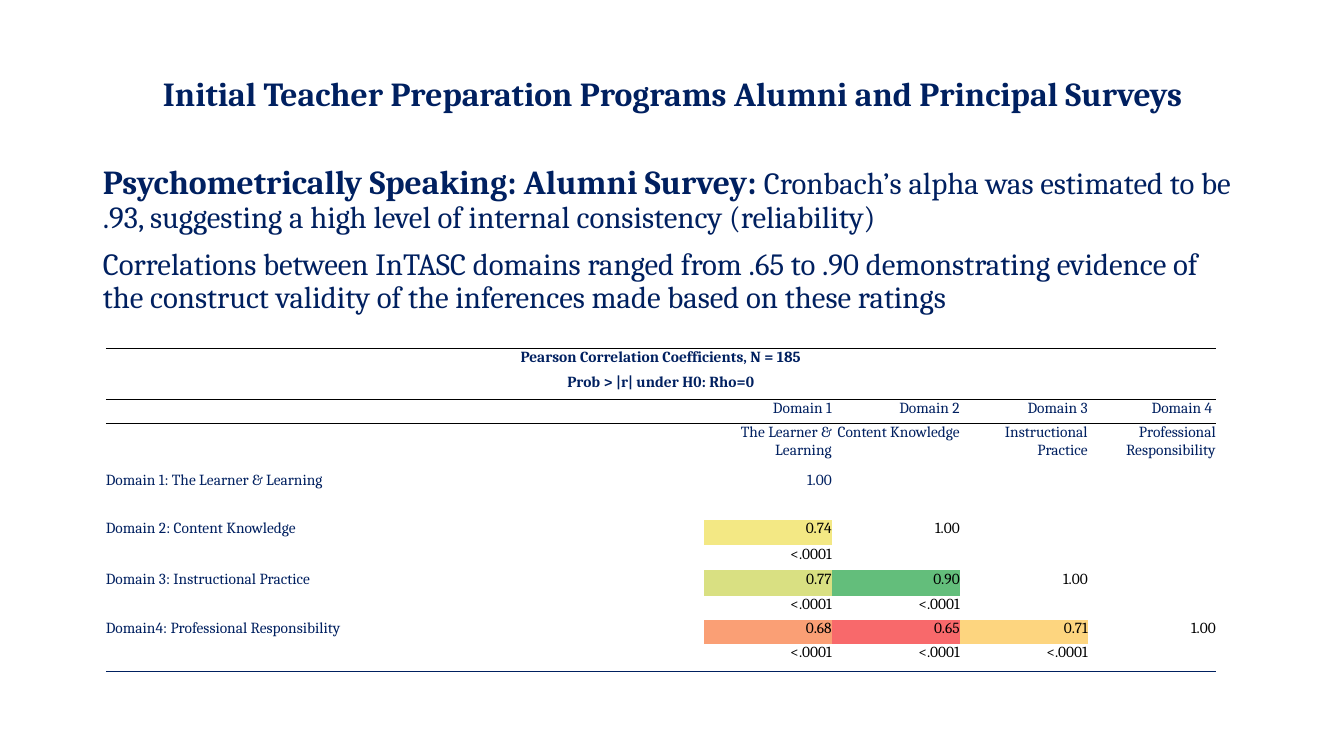
from dataclasses import dataclass

from lxml import etree
from pptx import Presentation
from pptx import util as u
from pptx.dml.color import RGBColor
from pptx.enum import text as t
from pptx.oxml import ns

PX = 9144
PLAIN = "{2D5ABB26-0587-4C30-8999-92F81FD0307C}"
LEFT, MID, RIGHT = t.PP_ALIGN.LEFT, t.PP_ALIGN.CENTER, t.PP_ALIGN.RIGHT


@dataclass(frozen=True)
class Theme:
    face: str = "Cambria"
    navy: str = "002060"
    black: str = "000000"
    head: int = 24
    body: int = 22
    small: int = 11


def px(num):
    return u.Emu(num * PX)


def apply(obj, form):
    for key, val in form.items():
        setattr(obj, key, val)


class Deck:
    def __init__(self, theme, wide, high):
        self.theme = theme
        self.prs = Presentation()
        apply(self.prs, {"slide_width": px(wide), "slide_height": px(high)})
        self.slide = self.prs.slides.add_slide(self.prs.slide_layouts[1])

    def place(self, shape, box):
        apply(shape, dict(zip(("left", "top", "width", "height"), map(px, box))))

    def label(self, para, words, size, color, bold=False):
        run = para.add_run()
        run.text = words
        apply(run.font, {"name": self.theme.face, "size": u.Pt(size), "bold": bold})
        run.font.color.rgb = RGBColor.from_string(color)

    def title(self, box, words):
        shape = self.slide.shapes.title
        self.place(shape, box)
        frame = shape.text_frame
        apply(frame, {"word_wrap": True, "auto_size": t.MSO_AUTO_SIZE.NONE,
                      "vertical_anchor": t.MSO_ANCHOR.MIDDLE,
                      "margin_bottom": px(40)})
        para = frame.paragraphs[0]
        apply(para, {"alignment": MID, "line_spacing": 0.9})
        self.label(para, words, self.theme.head, self.theme.navy, True)

    def body(self, box, paras):
        shape = self.slide.placeholders[1]
        self.place(shape, box)
        frame = shape.text_frame
        apply(frame, {"word_wrap": True, "auto_size": t.MSO_AUTO_SIZE.NONE})
        for num, runs in enumerate(paras):
            para = frame.add_paragraph() if num else frame.paragraphs[0]
            apply(para, {"alignment": LEFT, "line_spacing": 0.9,
                         "space_before": u.Pt(10)})
            props = para._p.get_or_add_pPr()
            props.set("marL", "0")
            props.set("indent", "0")
            etree.SubElement(props, ns.qn("a:buNone"))
            for words, size, bold in runs:
                self.label(para, words, size, self.theme.navy, bold)

    def table(self, box, cols, rows):
        frame = self.slide.shapes.add_table(len(rows), len(cols), *map(px, box))
        grid = frame.table
        apply(grid, {"first_row": False, "horz_banding": False})
        grid._tbl.tblPr.find(ns.qn("a:tableStyleId")).text = PLAIN
        for col, wide in zip(grid.columns, cols):
            col.width = px(wide)
        for row, high in zip(grid.rows, rows):
            row.height = px(high)
            for cell in row.cells:
                apply(cell, dict.fromkeys(
                    ("margin_left", "margin_top", "margin_right", "margin_bottom"), 0))
                end = cell.text_frame.paragraphs[0]._p.get_or_add_endParaRPr()
                end.set("sz", str(self.theme.small * 100))
        return grid

    def cell(self, cell, words, align, color, bold=False, fill=None):
        para = cell.text_frame.paragraphs[0]
        para.alignment = align
        self.label(para, words, self.theme.small, color, bold)
        if fill:
            cell.fill.solid()
            cell.fill.fore_color.rgb = RGBColor.from_string(fill)

    def rule(self, row, side, color):
        for cell in row.cells:
            line = etree.Element(ns.qn("a:ln" + side), w=str(u.Pt(1)))
            fill = etree.SubElement(line, ns.qn("a:solidFill"))
            etree.SubElement(fill, ns.qn("a:srgbClr"), val=color)
            cell._tc.get_or_add_tcPr().insert(0, line)


HEADS = ["Pearson Correlation Coefficients, N = 185", "Prob > |r| under H0: Rho=0"]
AREAS = [("Domain 1", "The Learner & Learning"), ("Domain 2", "Content Knowledge"),
         ("Domain 3", "Instructional Practice"),
         ("Domain 4 ", "Professional Responsibility")]
SCORES = [
    ("Domain 1: The Learner & Learning", []),
    ("Domain 2: Content Knowledge", [("0.74", "F3E884")]),
    ("Domain 3: Instructional Practice", [("0.77", "D9E082"), ("0.90", "63BE7B")]),
    ("Domain4: Professional Responsibility",
     [("0.68", "FA9F75"), ("0.65", "F8696B"), ("0.71", "FDD57F")]),
]


def main():
    theme = Theme()
    deck = Deck(theme, 1333, 750)
    deck.title((92, 40, 1150, 145),
               "Initial Teacher Preparation Programs Alumni and Principal Surveys")
    deck.body((92, 159, 1150, 520), [
        [("Psychometrically Speaking: Alumni Survey: ", theme.head, True),
         ("Cronbach’s alpha was estimated to be .93, suggesting a high level of "
          "internal consistency (reliability)", theme.body, False)],
        [("Correlations between InTASC domains ranged from .65 to .90 demonstrating "
          "evidence of the construct validity of the inferences made based on these "
          "ratings", theme.body, False)],
    ])
    grid = deck.table((105, 346, 1100, 321), [593] + [127] * 4,
                      [25, 25, 24, 48, 24, 24, 25, 25, 25, 24, 24, 27])
    for row, words in enumerate(HEADS):
        grid.cell(row, 0).merge(grid.cell(row, 4))
        deck.cell(grid.cell(row, 0), words, MID, theme.navy, True)
    for col, area in enumerate(AREAS, 1):
        for row, words in enumerate(area, 2):
            deck.cell(grid.cell(row, col), words, RIGHT, theme.navy)
    for num, (name, scores) in enumerate(SCORES):
        row = 4 + 2 * num
        deck.cell(grid.cell(row, 0), name, LEFT, theme.navy)
        for col, (score, fill) in enumerate(scores, 1):
            deck.cell(grid.cell(row, col), score, RIGHT, theme.black, fill=fill)
            deck.cell(grid.cell(row + 1, col), "<.0001", RIGHT, theme.black)
        deck.cell(grid.cell(row, num + 1), "1.00", RIGHT,
                  theme.black if num else theme.navy)
    for row, side, color in [(0, "T", theme.black), (1, "B", theme.black),
                             (2, "T", theme.black), (11, "B", theme.navy)]:
        deck.rule(grid.rows[row], side, color)
    deck.prs.save("out.pptx")


if __name__ == "__main__":
    main()
